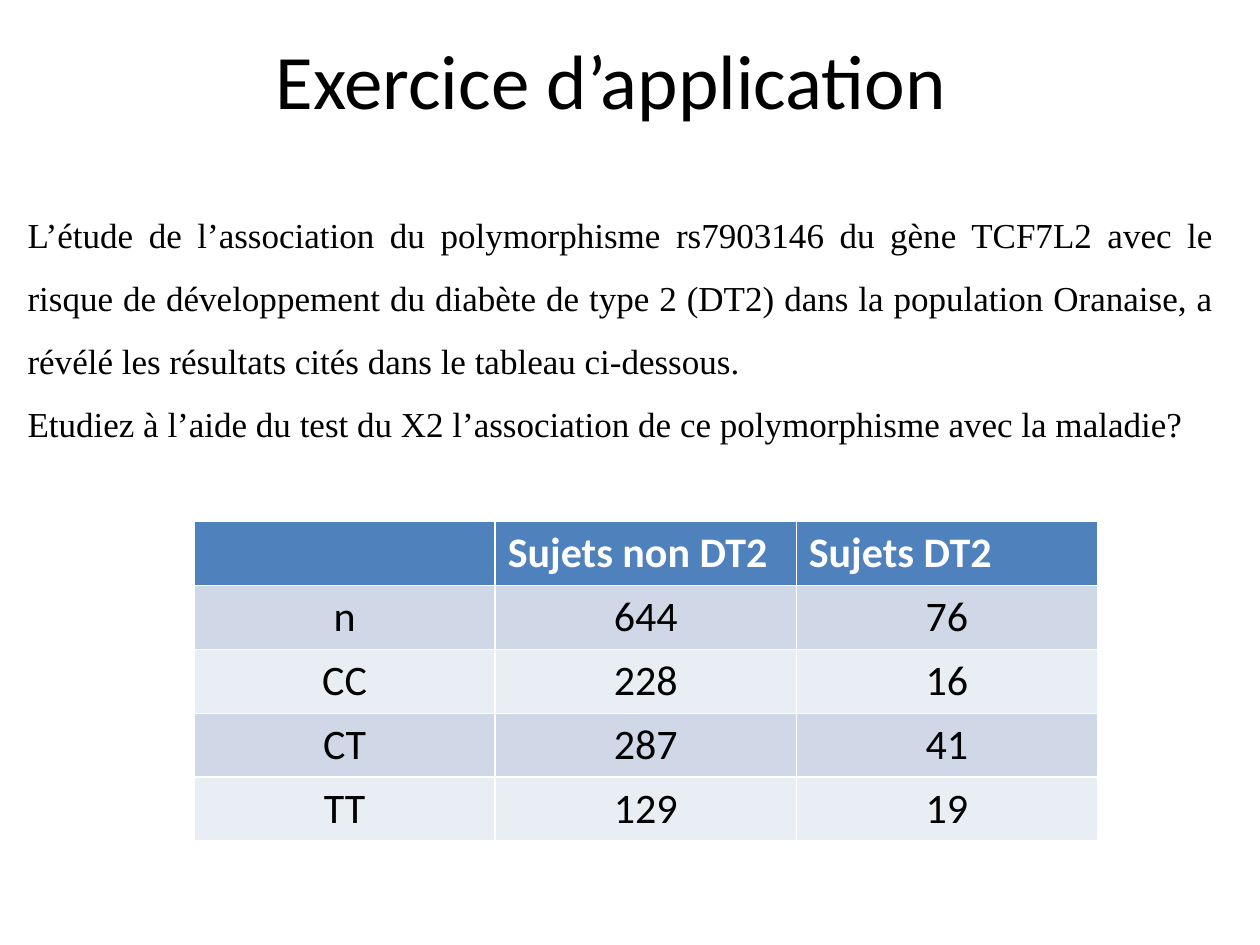
from pptx import Presentation
from pptx.dml.color import RGBColor
from pptx.enum.text import MSO_ANCHOR, MSO_AUTO_SIZE, PP_ALIGN
from pptx.util import Inches, Pt

# Content
TITLE = "Exercice d’application "
BODY = [
    "L’étude de l’association du polymorphisme rs7903146 du gène TCF7L2 "
    "avec le risque de développement du diabète de type 2 (DT2) dans la "
    "population Oranaise, a révélé les résultats cités dans le tableau "
    "ci-dessous.",
    "Etudiez à l’aide du test du X2 l’association de ce polymorphisme "
    "avec la maladie?",
]
ROWS = [
    ("", "Sujets non DT2", "Sujets DT2"),
    ("n", "644", "76"),
    ("CC", "228", "16"),
    ("CT", "287", "41"),
    ("TT", "129", "19"),
]
HEAD, BANDS = "4F81BD", ("D0D8E8", "E9EDF4")
BLACK, WHITE = "000000", "FFFFFF"
COL_W, ROW_H = 2.39, 0.5


def color(code):
    return RGBColor.from_string(code)


def write(para, text, size, font, ink=BLACK, bold=False, align=None):
    para.alignment = align
    run = para.add_run()
    run.text = text
    run.font.size = Pt(size)
    run.font.name = font
    run.font.bold = bold
    run.font.color.rgb = color(ink)


deck = Presentation()
deck.slide_width, deck.slide_height = Inches(10), Inches(7.5)
slide = deck.slides.add_slide(deck.slide_layouts[5])

# Title
title = slide.shapes.title
title.left, title.top = Inches(0.42), Inches(0)
title.width, title.height = Inches(9), Inches(1.25)
title.text_frame.vertical_anchor = MSO_ANCHOR.MIDDLE
write(title.text_frame.paragraphs[0], TITLE, 44, "Calibri",
      align=PP_ALIGN.CENTER)

# Table: the default style supplies the white borders
table = slide.shapes.add_table(
    len(ROWS), len(ROWS[0]), Inches(1.54), Inches(4.14),
    Inches(COL_W * len(ROWS[0])), Inches(ROW_H * len(ROWS))).table
for col in table.columns:
    col.width = Inches(COL_W)
for r, row in enumerate(ROWS):
    table.rows[r].height = Inches(ROW_H)
    for c, text in enumerate(row):
        cell = table.cell(r, c)
        cell.fill.solid()
        cell.fill.fore_color.rgb = color(BANDS[(r - 1) % 2] if r else HEAD)
        para = cell.text_frame.paragraphs[0]
        if not text:
            para.font.size = Pt(24)
        elif r:
            write(para, text, 24, "Calibri", align=PP_ALIGN.CENTER)
        else:
            write(para, text, 24, "Calibri", WHITE, True)

# Exercise text
box = slide.shapes.add_textbox(
    Inches(0.12), Inches(1.48), Inches(9.61), Inches(2.12))
frame = box.text_frame
frame.word_wrap = True
frame.auto_size = MSO_AUTO_SIZE.SHAPE_TO_FIT_TEXT
for i, text in enumerate(BODY):
    para = frame.add_paragraph() if i else frame.paragraphs[0]
    para.line_spacing = 1.5
    write(para, text, 20, "Times New Roman", align=PP_ALIGN.JUSTIFY)

deck.save("out.pptx")
